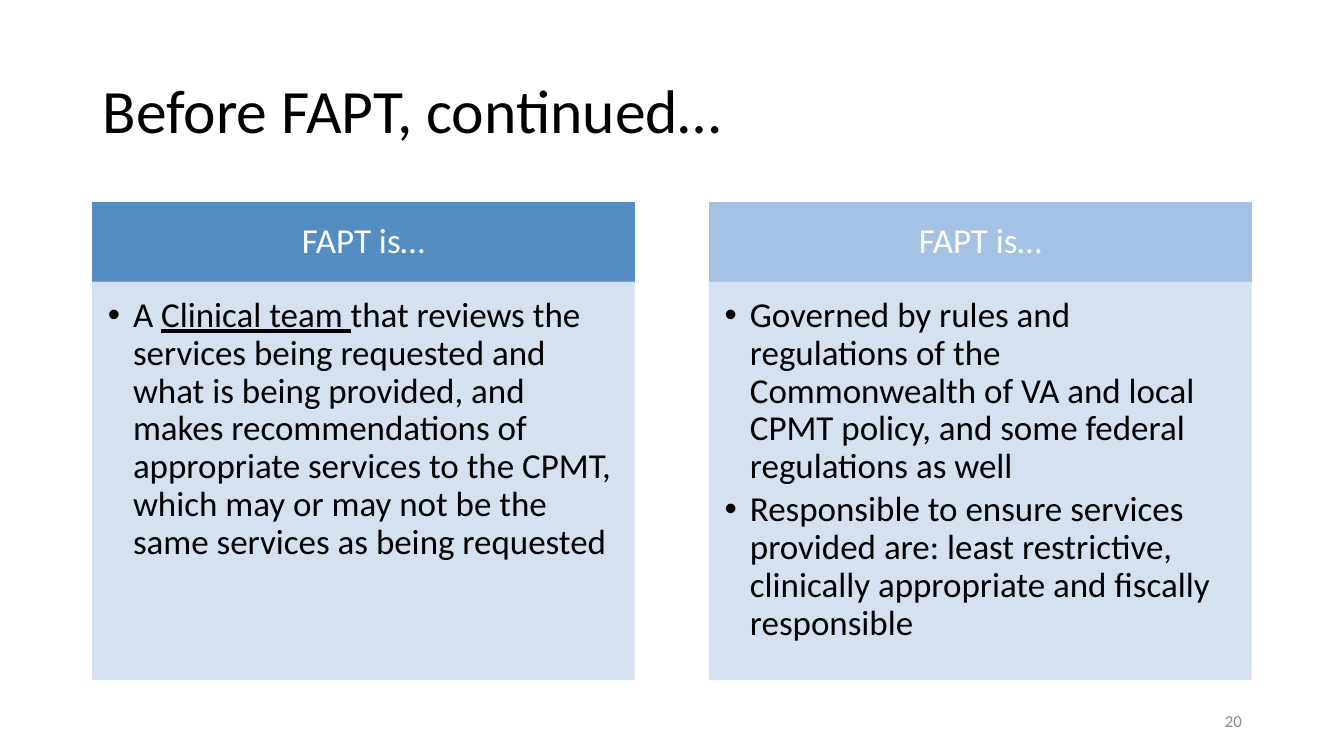
from lxml.etree import SubElement
from pptx import Presentation
from pptx.dml.color import RGBColor
from pptx.enum.shapes import MSO_SHAPE
from pptx.enum.text import MSO_ANCHOR, PP_ALIGN
from pptx.oxml.ns import qn
from pptx.util import Pt

COLORS = {
    "black": "000000",
    "white": "FFFFFF",
    "strong_blue": "538DC1",
    "soft_blue": "A5C1E3",
    "pale_blue": "D2DEEF",
    "gray": "8C8C8C",
}
HEADER_FORMAT = {"alignment": PP_ALIGN.CENTER, "line_spacing": 0.9}
BODY_FORMAT = {"alignment": PP_ALIGN.LEFT, "line_spacing": 0.9, "space_after": Pt(3.75)}
COLUMN_LEFT, COLUMN_STEP, COLUMN_WIDTH = 66.24, 440.64, 386.64

# Each paragraph is a list of (text, underlined) runs.
columns = [
    ("strong_blue", [
        [("A ", False), ("Clinical team ", True),
         ("that reviews the services being requested and what is being provided, "
          "and makes recommendations of appropriate services to the CPMT, which "
          "may or may not be the same services as being requested", False)],
    ]),
    ("soft_blue", [
        [("Governed by rules and regulations of the Commonwealth of VA and local "
          "CPMT policy, and some federal regulations as well", False)],
        [("Responsible to ensure services provided are: least restrictive, "
          "clinically appropriate and fiscally responsible", False)],
    ]),
]


def write_text(shape, paragraphs, size, color, anchor, margins, paragraph_format):
    """Fill a shape with paragraphs of (text, underlined) runs; margins are left, top, right, bottom."""
    frame = shape.text_frame
    frame.word_wrap = True
    frame.vertical_anchor = anchor
    for side, margin in zip(("left", "top", "right", "bottom"), margins):
        setattr(frame, f"margin_{side}", Pt(margin))
    for index, runs in enumerate(paragraphs):
        paragraph = frame.add_paragraph() if index else frame.paragraphs[0]
        for name, value in paragraph_format.items():
            setattr(paragraph, name, value)
        for text, underlined in runs:
            run = paragraph.add_run()
            run.text = text
            run.font.name = "Calibri"
            run.font.size = Pt(size)
            run.font.underline = underlined
            run.font.color.rgb = RGBColor.from_string(COLORS[color])


def add_panel(left, top, height, color):
    panel = slide.shapes.add_shape(
        MSO_SHAPE.RECTANGLE, Pt(left), Pt(top), Pt(COLUMN_WIDTH), Pt(height))
    panel.shadow.inherit = False
    panel.line.width = Pt(1)
    for fill in (panel.fill, panel.line.fill):
        fill.solid()
        fill.fore_color.rgb = RGBColor.from_string(COLORS[color])
    return panel


presentation = Presentation()
presentation.slide_width = Pt(960)
presentation.slide_height = Pt(540)
slide = presentation.slides.add_slide(presentation.slide_layouts[6])

title = slide.shapes.add_textbox(Pt(66.24), Pt(28.8), Pt(828), Pt(104.4))
write_text(title, [[("Before FAPT, continued…", False)]], 44, "black",
           MSO_ANCHOR.MIDDLE, (7.2, 3.6, 7.2, 3.6), {"line_spacing": 0.9})

for index, (header_color, paragraphs) in enumerate(columns):
    left = COLUMN_LEFT + index * COLUMN_STEP
    header = add_panel(left, 144.72, 56.88, header_color)
    write_text(header, [[("FAPT is…", False)]], 25, "white",
               MSO_ANCHOR.MIDDLE, (13.68, 7.92, 13.68, 7.92), HEADER_FORMAT)

    body = add_panel(left, 201.6, 283.68, "pale_blue")
    for color in body._element.spPr.iter(qn("a:srgbClr")):
        SubElement(color, qn("a:alpha"), val="90000")
    write_text(body, paragraphs, 25, "black",
               MSO_ANCHOR.TOP, (10.8, 10.8, 13.68, 15.84), BODY_FORMAT)
    for paragraph in body.text_frame.paragraphs:
        properties = paragraph._p.get_or_add_pPr()
        properties.set("marL", str(Pt(18)))
        properties.set("indent", str(-Pt(18)))
        SubElement(properties, qn("a:buFont"), typeface="Arial")
        SubElement(properties, qn("a:buChar"), char="•")

page_number = slide.shapes.add_textbox(Pt(678.24), Pt(500.4), Pt(216), Pt(28.8))
write_text(page_number, [[("20", False)]], 12, "gray",
           MSO_ANCHOR.MIDDLE, (7.2, 3.6, 7.2, 3.6), {"alignment": PP_ALIGN.RIGHT})

presentation.save("out.pptx")
